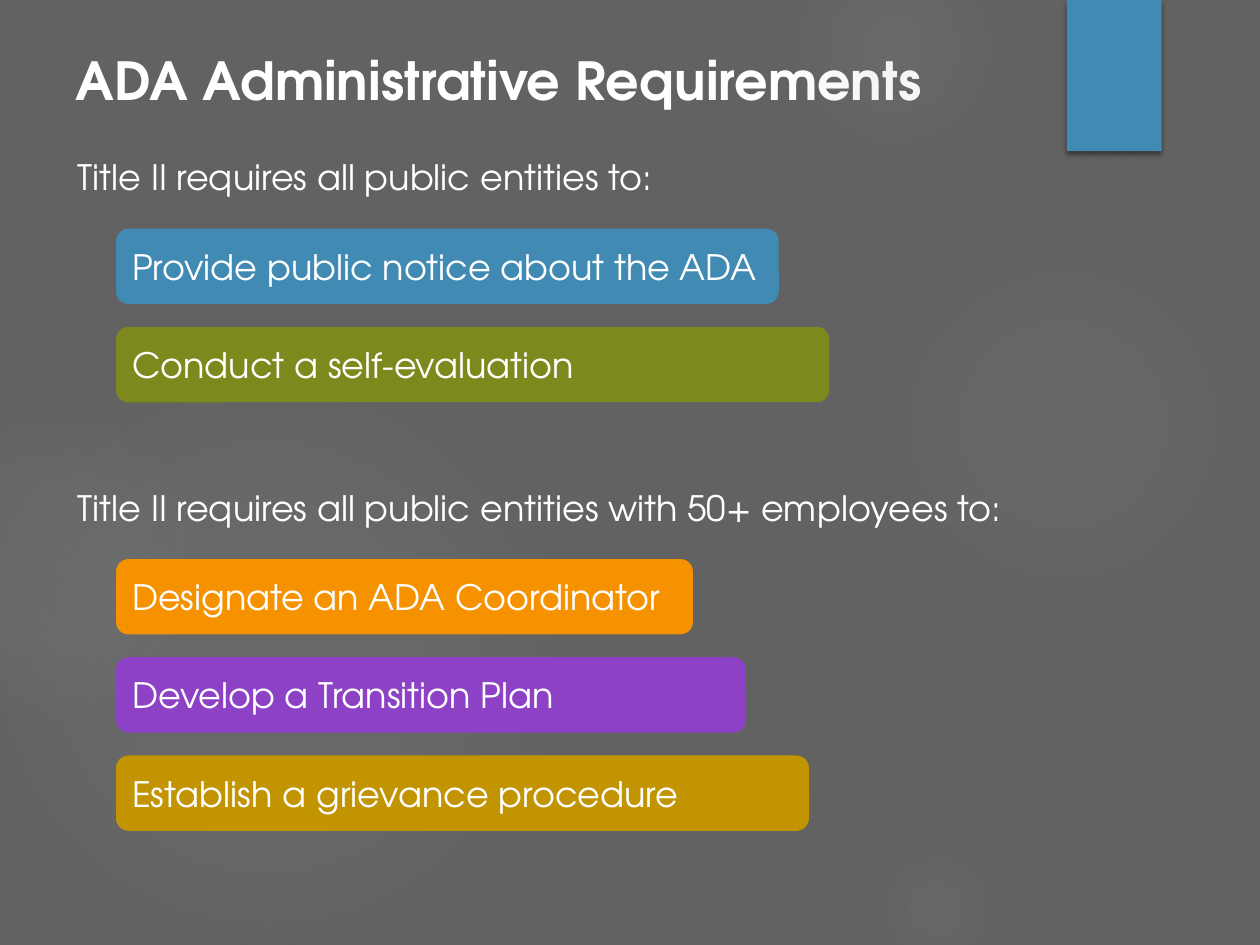
import pptx
import pptx.dml.color
import pptx.enum.shapes
import pptx.enum.text
import pptx.oxml
import pptx.oxml.ns
import pptx.util
from pptx.util import Cm

SHAPES = pptx.enum.shapes.MSO_SHAPE
TEXT = pptx.enum.text
NAMESPACE = pptx.oxml.ns.nsdecls("a")


def color(value):
    return pptx.dml.color.RGBColor.from_string(value)


def apply_format(target, values):
    for name, value in values.items():
        setattr(target, name, value)


class Page:
    """Holds the text style and the slide being built."""

    font = "TeX Gyre Adventor"
    text_color = "FFFFFF"
    glow_color = "9E9E9E"

    def __init__(self, deck):
        self.slide = deck.slides.add_slide(deck.slide_layouts[5])
        self.slide.background.fill.solid()
        self.slide.background.fill.fore_color.rgb = color("626262")

    def set_text(self, shape, text, size=20, bold=False, before=0, after=0,
                 anchor=TEXT.MSO_ANCHOR.TOP):
        apply_format(shape.text_frame, {
            "word_wrap": True, "auto_size": TEXT.MSO_AUTO_SIZE.NONE,
            "vertical_anchor": anchor})
        para = shape.text_frame.paragraphs[0]
        apply_format(para, {
            "alignment": TEXT.PP_ALIGN.LEFT,
            "space_before": pptx.util.Pt(before),
            "space_after": pptx.util.Pt(after)})
        span = para.add_run()
        span.text = text
        apply_format(span.font, {
            "name": self.font, "size": pptx.util.Pt(size), "bold": bold})
        span.font.color.rgb = color(self.text_color)

    def title(self, text, left, top, width, height):
        box = self.slide.shapes.title
        apply_format(box, {"left": Cm(left), "top": Cm(top),
                           "width": Cm(width), "height": Cm(height)})
        self.set_text(box, text, size=30, bold=True, before=10)

    def heading(self, text, left, top, width, height):
        box = self.slide.shapes.add_textbox(
            Cm(left), Cm(top), Cm(width), Cm(height))
        self.set_text(box, text, after=16)

    def shape(self, kind, left, top, width, height, fill=None):
        shape = self.slide.shapes.add_shape(
            kind, Cm(left), Cm(top), Cm(width), Cm(height))
        shape.shadow.inherit = False
        shape.line.fill.background()
        if fill:
            shape.fill.solid()
            shape.fill.fore_color.rgb = color(fill)
        return shape

    def pill(self, text, left, top, width, height, fill):
        box = self.shape(SHAPES.ROUNDED_RECTANGLE, left, top, width, height, fill)
        self.set_text(box, text, anchor=TEXT.MSO_ANCHOR.MIDDLE)

    def glow(self, left, top, size, stops):
        """Draw a circle that fades outwards; stops are (position, opacity) in percent."""
        circle = self.shape(SHAPES.OVAL, left, top, size, size)
        stop_xml = "".join(
            f'<a:gs pos="{position * 1000}"><a:srgbClr val="{self.glow_color}">'
            f'<a:alpha val="{opacity * 1000}"/></a:srgbClr></a:gs>'
            for position, opacity in stops)
        gradient = pptx.oxml.parse_xml(
            f'<a:gradFill {NAMESPACE} rotWithShape="1"><a:gsLst>{stop_xml}</a:gsLst>'
            '<a:path path="circle"><a:fillToRect l="50000" t="50000" r="50000" b="50000"/>'
            '</a:path></a:gradFill>')
        circle._element.spPr.find(pptx.oxml.ns.qn("a:prstGeom")).addnext(gradient)

    def ribbon(self, left, top, width, height, fill):
        box = self.shape(SHAPES.RECTANGLE, left, top, width, height, fill)
        effects = box._element.spPr.find(pptx.oxml.ns.qn("a:effectLst"))
        effects.append(pptx.oxml.parse_xml(
            f'<a:outerShdw {NAMESPACE} blurRad="38100" dist="25400" dir="5400000" '
            'rotWithShape="0"><a:srgbClr val="000000"><a:alpha val="45000"/>'
            '</a:srgbClr></a:outerShdw>'))


GLOWS = [
    (17.5, 4.65, 7.82, [(0, 7), (36, 6), (69, 0)]),
    (15.8, -1.27, 4.45, [(0, 14), (36, 7), (73, 0)]),
    (17.5, 16.94, 2.74, [(0, 9), (36, 5), (66, 0)]),
    (-0.43, 7.42, 11.63, [(0, 11), (36, 10), (75, 0)]),
    (-2.34, 8.05, 6.55, [(0, 8), (36, 8), (72, 0)]),
]
SECTIONS = [
    (3.02, "Title II requires all public entities to:", [
        ("Provide public notice about the ADA", 13.36, "418AB3"),
        ("Conduct a self-evaluation", 14.38, "7D891D")]),
    (9.68, "Title II requires all public entities with 50+ employees to:", [
        ("Designate an ADA Coordinator", 11.63, "F69200"),
        ("Develop a Transition Plan", 12.7, "8D42C6"),
        ("Establish a grievance procedure", 13.97, "C29401")]),
]
PILL_OFFSET = 1.59
PILL_PITCH = 1.98


def main():
    deck = pptx.Presentation()
    apply_format(deck, {"slide_width": Cm(25.4), "slide_height": Cm(19.05)})
    page = Page(deck)
    for glow in GLOWS:
        page.glow(*glow)
    page.ribbon(21.51, 0, 1.91, 3.05, "418AB3")
    page.title("ADA Administrative Requirements", 1.27, 0.84, 19.89, 1.7)
    for top, heading, duties in SECTIONS:
        page.heading(heading, 1.32, top, 24.08, 1.12)
        for row, (duty, width, fill) in enumerate(duties):
            page.pill(duty, 2.34, top + PILL_OFFSET + row * PILL_PITCH,
                      width, 1.52, fill)
    deck.save("out.pptx")


if __name__ == "__main__":
    main()
